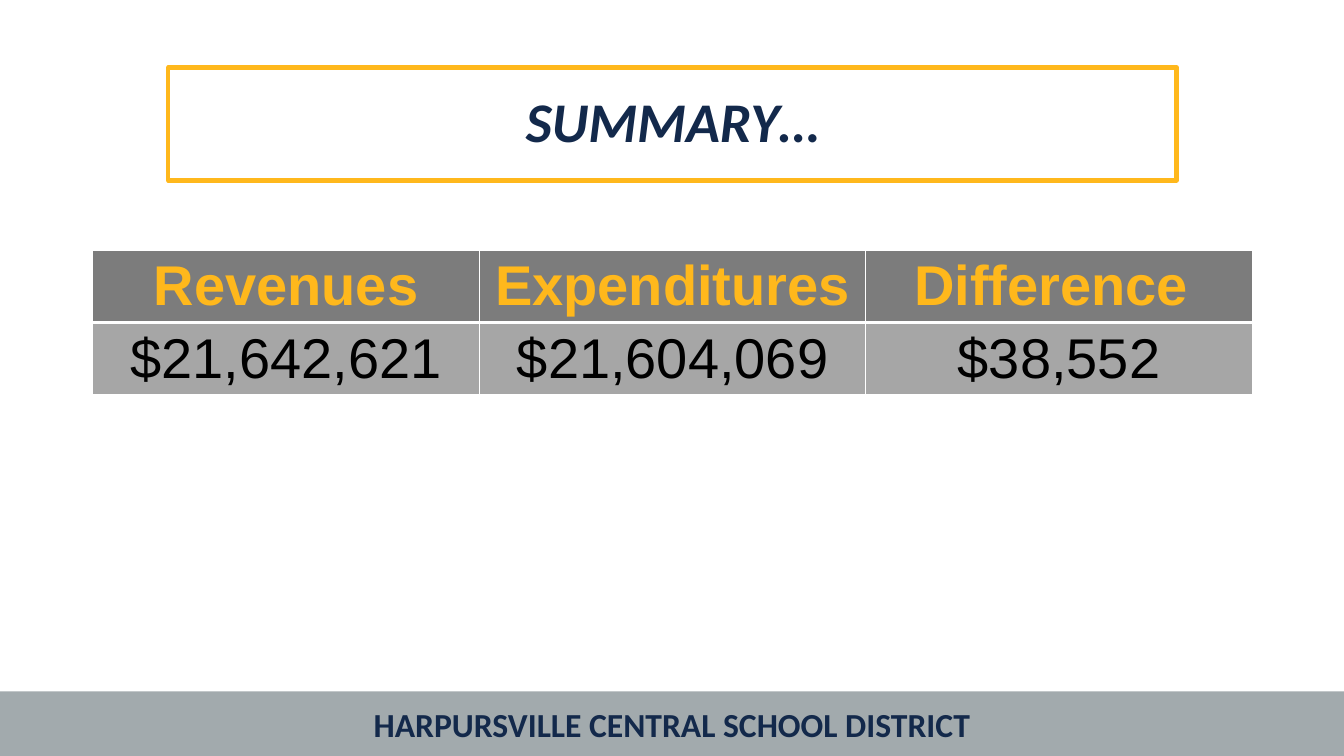
from lxml import etree
from pptx import Presentation
from pptx.dml.color import RGBColor
from pptx.enum.shapes import MSO_SHAPE
from pptx.enum.text import MSO_ANCHOR, PP_ALIGN
from pptx.oxml.ns import qn
from pptx.util import Inches, Pt

RECTANGLE = MSO_SHAPE.RECTANGLE
MIDDLE = MSO_ANCHOR.MIDDLE
CENTER = PP_ALIGN.CENTER

NAVY = RGBColor(0x13, 0x29, 0x4B)
GOLD = RGBColor(0xFF, 0xB8, 0x1C)
FOOTER_GRAY = RGBColor(0xA2, 0xAA, 0xAD)
HEADER_GRAY = RGBColor(0x7C, 0x7C, 0x7C)
BODY_GRAY = RGBColor(0xA6, 0xA6, 0xA6)
BLACK = RGBColor(0, 0, 0)
WHITE = RGBColor(0xFF, 0xFF, 0xFF)

SLIDE_WIDTH = 13.33
SUMMARY = [
    ["Revenues", "Expenditures", "Difference "],
    ["$21,642,621", "$21,604,069", "$38,552"],
]


class SlideBuilder:
    heading_font = "Calibri"
    table_font = "Arial"
    table_size = 40
    cell_margin = 0.03
    row_height = 0.72

    def __init__(self, slide):
        self.slide = slide

    def add_text(self, text_frame, text, font, size, color, bold=True, italic=False):
        paragraph = text_frame.paragraphs[0]
        paragraph.alignment = CENTER
        run = paragraph.add_run()
        run.text = text
        run.font.name = font
        run.font.size = Pt(size)
        run.font.bold = bold
        run.font.italic = italic
        run.font.color.rgb = color
        return paragraph

    def box(self, left, top, width, height, text, size,
            fill=None, line=None, italic=False):
        shape = self.slide.shapes.add_shape(
            RECTANGLE, Inches(left), Inches(top), Inches(width), Inches(height))
        shape.shadow.inherit = False
        if fill is None:
            shape.fill.background()
        else:
            shape.fill.solid()
            shape.fill.fore_color.rgb = fill
        if line is None:
            shape.line.fill.background()
        else:
            shape.line.color.rgb = line
            shape.line.width = Pt(3)
        shape.text_frame.word_wrap = True
        shape.text_frame.vertical_anchor = MIDDLE
        return self.add_text(shape.text_frame, text, self.heading_font, size,
                             NAVY, italic=italic)

    def border(self, cell, side, points):
        """Draw one white cell edge; call before the cell is filled."""
        line = etree.SubElement(cell._tc.get_or_add_tcPr(), qn(f"a:{side}"),
                                w=str(Pt(points)))
        fill = etree.SubElement(line, qn("a:solidFill"))
        etree.SubElement(fill, qn("a:srgbClr"), val=str(WHITE))

    def table(self, left, top, width, rows):
        frame = self.slide.shapes.add_table(
            len(rows), len(rows[0]), Inches(left), Inches(top),
            Inches(width), Inches(self.row_height * len(rows)))
        for row_index, row in enumerate(rows):
            is_header = row_index == 0
            edges = {"lnL": 1, "lnR": 1,
                     "lnT": 1 if is_header else 3,
                     "lnB": 3 if is_header else 1}
            for column_index, text in enumerate(row):
                cell = frame.table.cell(row_index, column_index)
                for side, points in edges.items():
                    self.border(cell, side, points)
                cell.fill.solid()
                cell.fill.fore_color.rgb = HEADER_GRAY if is_header else BODY_GRAY
                cell.margin_top = cell.margin_bottom = Inches(self.cell_margin)
                cell.vertical_anchor = MIDDLE
                self.add_text(cell.text_frame, text, self.table_font, self.table_size,
                              GOLD if is_header else BLACK, bold=is_header)


def main():
    presentation = Presentation()
    presentation.slide_width = Inches(SLIDE_WIDTH)
    presentation.slide_height = Inches(7.5)
    builder = SlideBuilder(presentation.slides.add_slide(presentation.slide_layouts[6]))

    builder.box(0, 6.86, SLIDE_WIDTH, 0.64, "HARPURSVILLE CENTRAL SCHOOL DISTRICT",
                24, fill=FOOTER_GRAY)
    title = builder.box(1.67, 0.67, 10, 1.12, "SUMMARY…", 40, line=GOLD, italic=True)
    title.line_spacing = 0.9
    builder.table(0.92, 2.48, 11.5, SUMMARY)

    presentation.save("out.pptx")


if __name__ == "__main__":
    main()
